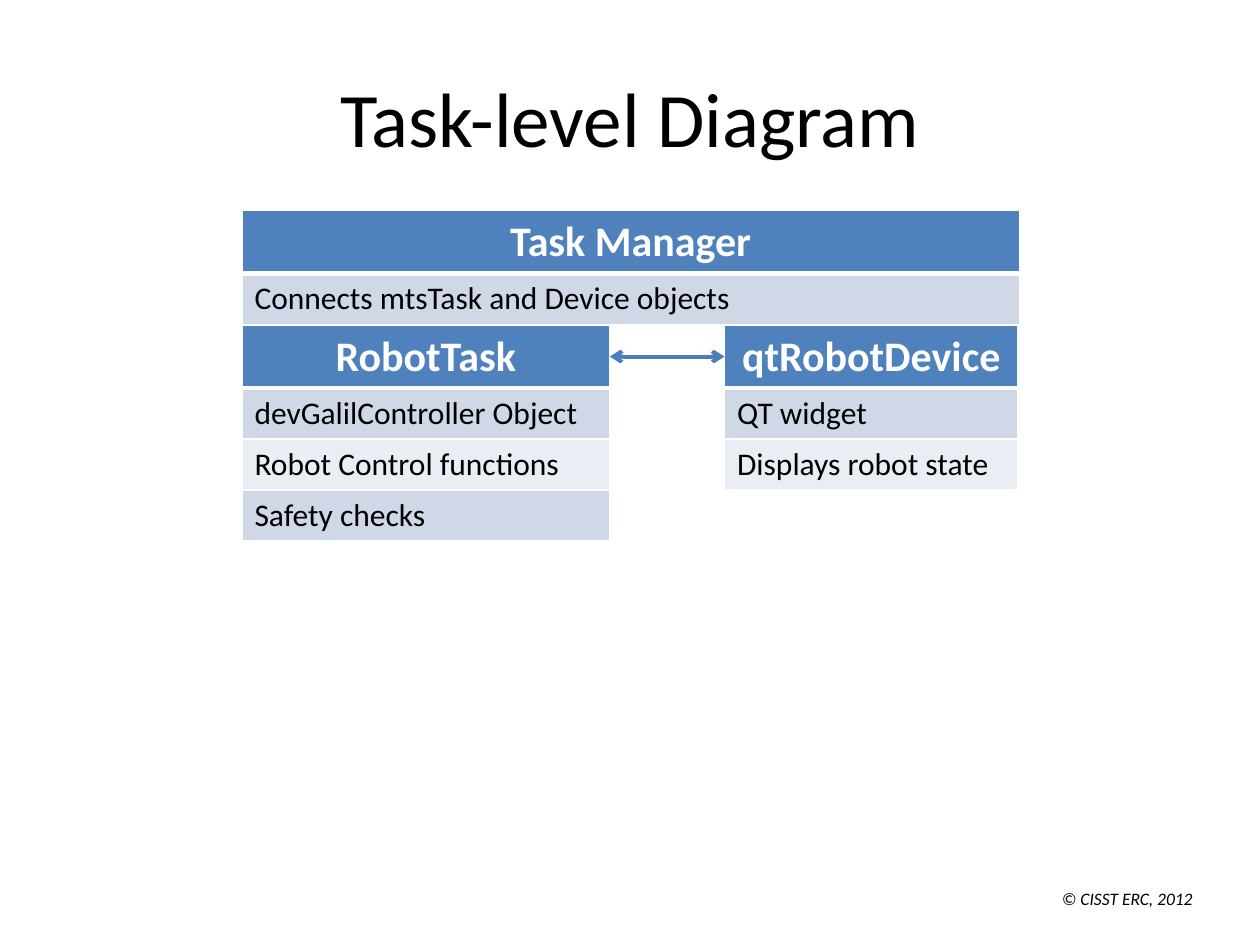
from lxml import etree
from pptx import Presentation
from pptx.dml.color import RGBColor
from pptx.enum import shapes, text
from pptx.oxml.ns import qn
from pptx.util import Inches, Pt

BLACK = RGBColor(0, 0, 0)
WHITE = RGBColor(255, 255, 255)
BLUE = RGBColor(0x4F, 0x81, 0xBD)
ARROW = RGBColor(0x4B, 0x7E, 0xBC)
BANDS = [RGBColor(0xD0, 0xD8, 0xE8), RGBColor(0xE9, 0xED, 0xF4)]
FONT = "Calibri"
HEAD, ROW = 0.5, 0.405

TITLE = "Task-level Diagram"
CREDIT = "© CISST ERC, 2012"
# left, top, width, heading, lines
TABLES = [
    (1.92, 1.67, 6.17, "Task Manager",
     ["Connects mtsTask and Device objects"]),
    (1.92, 2.58, 2.92, "RobotTask",
     ["devGalilController Object", "Robot Control functions",
      "Safety checks"]),
    (5.75, 2.58, 2.33, "qtRobotDevice",
     ["QT widget", "Displays robot state"]),
]


def write(frame, words, size, color, align, bold=False, italic=False):
    par = frame.paragraphs[0]
    par.alignment = align
    run = par.add_run()
    run.text = words
    font = run.font
    font.name, font.size = FONT, Pt(size)
    font.bold, font.italic = bold, italic
    font.color.rgb = color


def add_label(slide, box, words, size, align, anchor, italic=False):
    frame = slide.shapes.add_textbox(*map(Inches, box)).text_frame
    frame.word_wrap = True
    frame.vertical_anchor = anchor
    write(frame, words, size, BLACK, align, italic=italic)


def add_borders(cell, top, bottom):
    props = cell._tc.get_or_add_tcPr()
    widths = {"lnL": 1, "lnR": 1, "lnT": top, "lnB": bottom}
    for i, (side, width) in enumerate(widths.items()):
        line = etree.Element(qn("a:" + side), w=str(Pt(width)))
        fill = etree.SubElement(line, qn("a:solidFill"))
        etree.SubElement(fill, qn("a:srgbClr"), val=str(WHITE))
        props.insert(i, line)


def add_list(slide, left, top, width, heading, lines):
    """Add a one-column table with a heading above banded lines."""
    high = HEAD + ROW * len(lines)
    box = map(Inches, (left, top, width, high))
    table = slide.shapes.add_table(len(lines) + 1, 1, *box).table
    for i, words in enumerate([heading] + lines):
        head = i == 0
        table.rows[i].height = Inches(HEAD if head else ROW)
        cell = table.cell(i, 0)
        cell.fill.solid()
        cell.fill.fore_color.rgb = BLUE if head else BANDS[(i - 1) % 2]
        add_borders(cell, 3 if i == 1 else 1, 3 if head else 1)
        write(cell.text_frame, words, 24 if head else 18,
              WHITE if head else BLACK,
              text.PP_ALIGN.CENTER if head else text.PP_ALIGN.LEFT, bold=head)


def add_arrow(slide, start, end, y):
    link = slide.shapes.add_connector(
        shapes.MSO_CONNECTOR.STRAIGHT, *map(Inches, (start, y, end, y)))
    link.line.color.rgb = ARROW
    link.line.width = Pt(2.25)
    line = link.line._get_or_add_ln()
    for tip in ("headEnd", "tailEnd"):
        etree.SubElement(line, qn("a:" + tip), type="arrow")
    etree.SubElement(link._element.spPr, qn("a:effectLst"))


def main():
    deck = Presentation()
    deck.slide_width, deck.slide_height = Inches(10), Inches(7.5)
    slide = deck.slides.add_slide(deck.slide_layouts[6])
    add_label(slide, (8.33, 7, 1.67, 0.27), CREDIT, 10, text.PP_ALIGN.LEFT,
              text.MSO_ANCHOR.TOP, italic=True)
    add_label(slide, (0.5, 0.3, 9, 1.25), TITLE, 44, text.PP_ALIGN.CENTER,
              text.MSO_ANCHOR.MIDDLE)
    for row in TABLES:
        add_list(slide, *row)
    task, device = TABLES[1:]
    add_arrow(slide, task[0] + task[2], device[0], task[1] + HEAD / 2)
    deck.save("out.pptx")


if __name__ == "__main__":
    main()
